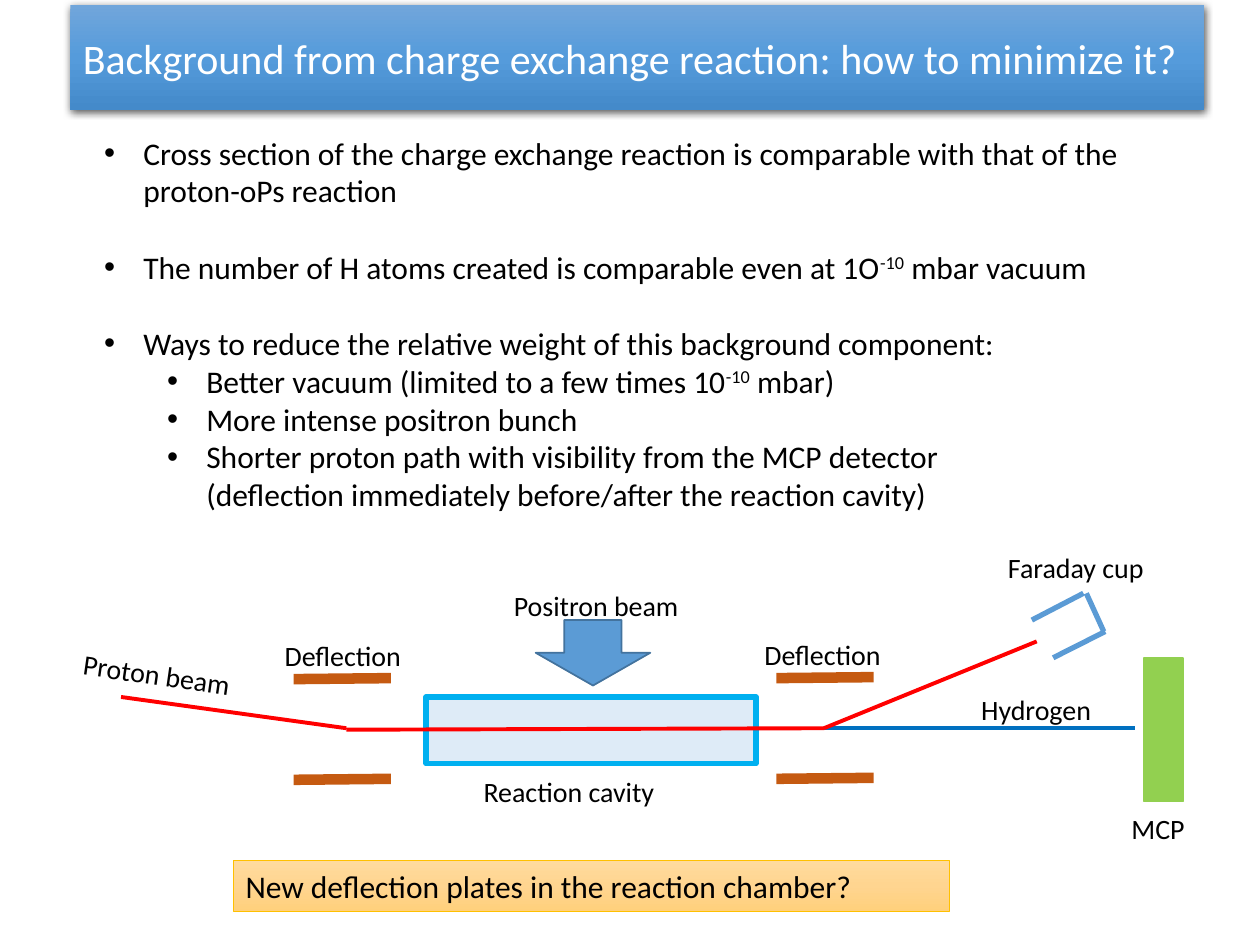
from lxml.etree import SubElement
from pptx import Presentation
from pptx.dml.color import RGBColor
from pptx.enum.shapes import MSO_CONNECTOR as Link, MSO_SHAPE as Shape
from pptx.enum.text import MSO_ANCHOR as Anchor, PP_ALIGN as Align
from pptx.oxml import parse_xml
from pptx.oxml.ns import nsdecls, qn
from pptx.util import Cm, Pt

BLACK = RGBColor(0x00, 0x00, 0x00)
WHITE = RGBColor(0xFF, 0xFF, 0xFF)
RED = RGBColor(0xFF, 0x00, 0x00)
BLUE = RGBColor(0x5B, 0x9B, 0xD5)
DARK_BLUE = RGBColor(0x43, 0x73, 0x9E)
HYDROGEN_BLUE = RGBColor(0x00, 0x70, 0xC0)
CAVITY_EDGE = RGBColor(0x00, 0xB0, 0xF0)
CAVITY_FILL = RGBColor(0xDE, 0xEB, 0xF7)
PLATE_BROWN = RGBColor(0xC5, 0x5A, 0x11)
GREEN = RGBColor(0x92, 0xD0, 0x50)
GOLD = RGBColor(0xFF, 0xC0, 0x00)
TITLE_BLUES = [RGBColor(0x71, 0xA6, 0xDB), RGBColor(0x55, 0x9B, 0xDB), RGBColor(0x44, 0x8A, 0xCA)]
BANNER_ORANGES = [RGBColor(0xFF, 0xDB, 0x9E), RGBColor(0xFF, 0xD5, 0x90), RGBColor(0xFF, 0xD0, 0x7C)]

BULLETS = [
    (0, 0, "Cross section of the charge exchange reaction is comparable with that of the proton-oPs reaction"),
    (0, 22, "The number of H atoms created is comparable even at 1O^-10^ mbar vacuum"),
    (0, 22, "Ways to reduce the relative weight of this background component:"),
    (1, 0, "Better vacuum (limited to a few times 10^-10^ mbar)"),
    (1, 0, "More intense positron bunch"),
    (1, 0, "Shorter proton path with visibility from the MCP detector\n"
           "(deflection immediately before/after the reaction cavity)"),
]
LABELS = [
    ("Deflection", 5.49, 12.75, 3.25, 0),
    ("Deflection", 15.16, 12.73, 3.25, 0),
    ("Faraday cup", 20.07, 10.97, 3.35, 0),
    ("MCP", 22.56, 16.23, 1.6, 0),
    ("Proton beam", 1.42, 13.18, 4.22, 8.2),
    ("Hydrogen", 19.53, 13.84, 3.02, 0),
    ("Reaction cavity", 9.5, 15.49, 4.83, 0),
    ("Positron beam", 10.11, 11.73, 4.62, 0),
]
BEAMS = [
    ((6.98, 14.71), (16.61, 14.68), RED),
    ((16.61, 14.68), (22.89, 14.68), HYDROGEN_BLUE),
    ((16.61, 14.68), (20.9, 12.93), RED),
    ((6.98, 14.68), (2.44, 14.05), RED),
]
CUP_WALLS = [
    ((20.8, 12.5), (21.84, 11.96)),
    ((21.9, 11.96), (22.25, 12.73)),
    ((21.23, 13.26), (22.28, 12.73)),
]


def style_run(run, size, color):
    """Give a run the slide font, a size and a colour."""
    run.font.name = "Calibri"
    run.font.size = Pt(size)
    run.font.color.rgb = color


def add_block(slide, kind, box, fill=None, edge=None, weight=1):
    """Add a preset shape with a plain fill and an optional outline."""
    block = slide.shapes.add_shape(kind, *map(Cm, box))
    block.shadow.inherit = False
    if fill is not None:
        block.fill.solid()
        block.fill.fore_color.rgb = fill
    if edge is None:
        block.line.fill.background()
    else:
        block.line.color.rgb = edge
        block.line.width = Pt(weight)
    return block


def add_gradient_bar(slide, box, colors, words, size, color, edge=None):
    """Add a rectangle with a vertical gradient and left-aligned text."""
    bar = add_block(slide, Shape.RECTANGLE, box, edge=edge, weight=0.5)
    stops = "".join(
        f'<a:gs pos="{i * 50000}"><a:srgbClr val="{tone}"/></a:gs>' for i, tone in enumerate(colors))
    bar._element.spPr.insert(2, parse_xml(
        f'<a:gradFill {nsdecls("a")} rotWithShape="1"><a:gsLst>{stops}</a:gsLst>'
        '<a:lin ang="5400000" scaled="0"/></a:gradFill>'))
    frame = bar.text_frame
    frame.text = words
    frame.word_wrap = True
    frame.vertical_anchor = Anchor.MIDDLE
    frame.paragraphs[0].alignment = Align.LEFT
    style_run(frame.paragraphs[0].runs[0], size, color)
    return bar


def cast_shadow(bar):
    """Give a shape a soft shadow falling downwards."""
    effects = bar._element.spPr.find(qn("a:effectLst"))
    effects.append(parse_xml(
        f'<a:outerShdw {nsdecls("a")} blurRad="57150" dist="19050" dir="5400000" algn="ctr" rotWithShape="0">'
        '<a:srgbClr val="000000"><a:alpha val="63000"/></a:srgbClr></a:outerShdw>'))


def add_line(slide, start, end, color, weight):
    """Add a straight line without a shadow."""
    line = slide.shapes.add_connector(Link.STRAIGHT, *map(Cm, (*start, *end)))
    line.line.color.rgb = color
    line.line.width = Pt(weight)
    SubElement(line._element.spPr, qn("a:effectLst"))


def add_label(slide, words, left, top, width, angle):
    """Add a one-line caption to the diagram."""
    label = slide.shapes.add_textbox(Cm(left), Cm(top), Cm(width), Cm(0.94))
    label.rotation = angle
    label.text_frame.text = words
    label.text_frame.word_wrap = True
    style_run(label.text_frame.paragraphs[0].runs[0], 16, BLACK)


def add_bullets(slide):
    """Add the bulleted list, raising the text held between carets."""
    frame = slide.shapes.add_textbox(Cm(1.85), Cm(2.57), Cm(22), Cm(7.95)).text_frame
    frame.word_wrap = True
    for i, (level, gap, words) in enumerate(BULLETS):
        paragraph = frame.paragraphs[0] if i == 0 else frame.add_paragraph()
        paragraph.level = level
        paragraph.space_before = Pt(gap)
        properties = paragraph._p.get_or_add_pPr()
        properties.set("marL", str(Cm(0.79 + 1.27 * level)))
        properties.set("indent", str(-Cm(0.79)))
        SubElement(properties, qn("a:buFont"), typeface="Arial")
        SubElement(properties, qn("a:buChar"), char="•")
        for j, part in enumerate(words.split("^")):
            for k, line in enumerate(part.split("\n")):
                if k:
                    paragraph.add_line_break()
                run = paragraph.add_run()
                run.text = line
                style_run(run, 18, BLACK)
                if j % 2:
                    run.font._element.set("baseline", "30000")


def add_diagram(slide):
    """Draw the beam line with its cavity, plates, cup and detector."""
    add_block(slide, Shape.RECTANGLE, (8.59, 14.05, 6.65, 1.35), CAVITY_FILL, CAVITY_EDGE, 3)
    for start, end, color in BEAMS:
        add_line(slide, start, end, color, 2.25)
    for left, top in ((5.92, 13.69), (15.65, 13.67)):
        for plate_y in (top, top + 2.03):
            add_line(slide, (left, plate_y), (left + 1.96, plate_y - 0.02), PLATE_BROWN, 6)
    for start, end in CUP_WALLS:
        add_line(slide, start, end, BLUE, 3)
    add_block(slide, Shape.RECTANGLE, (23.06, 13.26, 0.79, 2.9), GREEN, GREEN)
    add_block(slide, Shape.DOWN_ARROW, (10.8, 12.5, 2.31, 1.32), BLUE, DARK_BLUE)
    for label in LABELS:
        add_label(slide, *label)


def main():
    """Build the slide and save it."""
    deck = Presentation()
    deck.slide_width, deck.slide_height = Cm(25.4), Cm(19.05)
    slide = deck.slides.add_slide(deck.slide_layouts[6])
    title = add_gradient_bar(slide, (1.42, 0.1, 22.86, 2.11), TITLE_BLUES,
                             "Background from charge exchange reaction: how to minimize it?", 24, WHITE)
    cast_shadow(title)
    add_bullets(slide)
    add_diagram(slide)
    add_gradient_bar(slide, (4.7, 17.35, 14.45, 1.02), BANNER_ORANGES,
                     "New deflection plates in the reaction chamber?", 18, BLACK, GOLD)
    deck.save("out.pptx")


if __name__ == "__main__":
    main()
